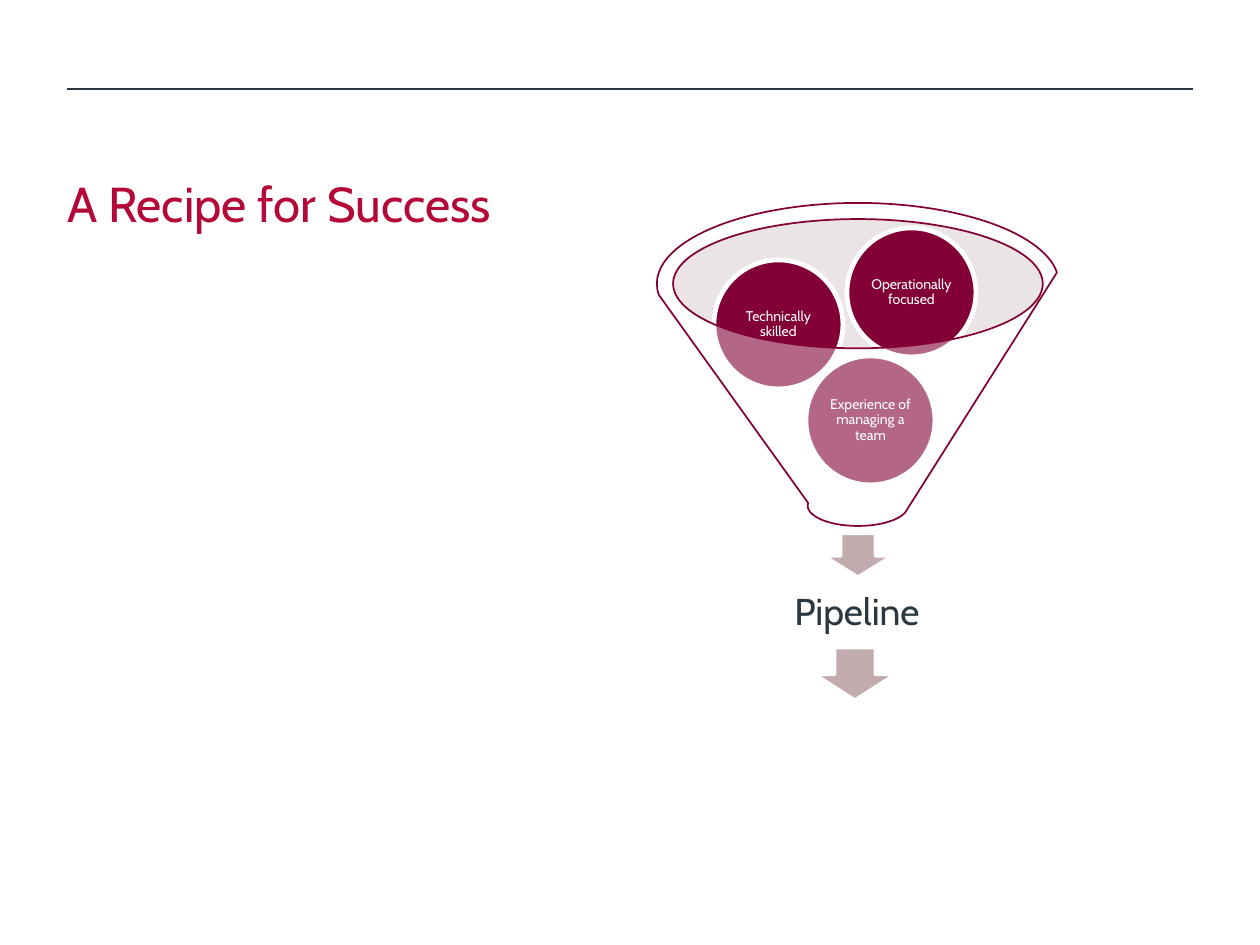
from lxml import etree
from pptx import Presentation
from pptx.dml.color import RGBColor
from pptx.enum.shapes import MSO_CONNECTOR, MSO_SHAPE
from pptx.enum.text import MSO_ANCHOR, PP_ALIGN
from pptx.oxml.ns import qn
from pptx.util import Emu, Pt

OVAL, FUNNEL, DOWN_ARROW = MSO_SHAPE.OVAL, MSO_SHAPE.FUNNEL, MSO_SHAPE.DOWN_ARROW
STRAIGHT = MSO_CONNECTOR.STRAIGHT
MIDDLE, BOTTOM = MSO_ANCHOR.MIDDLE, MSO_ANCHOR.BOTTOM
LEFT, CENTER = PP_ALIGN.LEFT, PP_ALIGN.CENTER

# Content: positions and sizes in px
SLIDE = (1260, 945)
RULE = (67, 89, 1193, 89)
TITLE = ("A Recipe for Success", (67, 72, 1025, 160))
OUTCOME = ("Pipeline", (685, 570, 344, 86))
MOUTH = (672, 218, 371, 129)
FUNNEL_BOX = (657, 203, 402, 323)
BALL_SIZE = 129
BALLS = [
    ("Experience of managing a team", 806, 356),
    ("Technically skilled", 714, 260),
    ("Operationally focused", 847, 228),
]
UPPER_ARROW = (822, 533, 72, 45)
LOWER_ARROW = (813, 647, 84, 54)

THEME = {
    "font": "Cabin",
    "title": "B30838", "dark": "2C3841", "wine": "820036",
    "arrow": "C1ABAE", "mouth": "CDBDBF", "white": "FFFFFF",
    "title_size": 21, "outcome_size": 16, "ball_size": 6,
    "rule_width": 0.5, "funnel_width": 0.75, "edge_width": 2,
    "veil": 40,
}


def px(value):
    return Emu(round(value * 914400 / 168))


def color(name):
    return RGBColor.from_string(THEME[name])


def add_part(page, kind, area, fill, line=None, width=None, opacity=None):
    part = page.shapes.add_shape(kind, *map(px, area))
    part.shadow.inherit = False
    part.fill.solid()
    part.fill.fore_color.rgb = color(fill)
    if opacity:
        tint = part.fill._xPr.find(qn("a:solidFill"))[0]
        etree.SubElement(tint, qn("a:alpha"), val=str(opacity * 1000))
    if line:
        part.line.color.rgb = color(line)
        part.line.width = Pt(THEME[width])
    else:
        part.line.fill.background()
    return part


def write(box, text, size, ink, align=CENTER, anchor=MIDDLE, inset=0, spacing=0.9):
    frame = box.text_frame
    frame.word_wrap = True
    frame.vertical_anchor = anchor
    frame.margin_left = frame.margin_right = px(inset)
    frame.margin_top = frame.margin_bottom = px(inset)
    para = frame.paragraphs[0]
    para.text = text
    para.alignment = align
    para.line_spacing = spacing
    para.font.name = THEME["font"]
    para.font.size = Pt(THEME[size])
    para.font.color.rgb = color(ink)


def add_text(page, content, *style, **layout):
    text, area = content
    write(page.shapes.add_textbox(*map(px, area)), text, *style, **layout)


def add_arrow(page, area):
    add_part(page, DOWN_ARROW, area, "arrow", "white", "edge_width")


def main():
    deck = Presentation()
    deck.slide_width, deck.slide_height = map(px, SLIDE)
    page = deck.slides.add_slide(deck.slide_layouts[6])

    # Heading
    rule = page.shapes.add_connector(STRAIGHT, *map(px, RULE))
    rule.line.color.rgb = color("dark")
    rule.line.width = Pt(THEME["rule_width"])
    etree.SubElement(rule._element.spPr, qn("a:effectLst"))
    add_text(page, TITLE, "title_size", "title", align=LEFT, anchor=BOTTOM, spacing=0.85)

    # Funnel mouth, first arrow and outcome
    add_part(page, OVAL, MOUTH, "mouth", opacity=THEME["veil"])
    add_arrow(page, UPPER_ARROW)
    add_text(page, OUTCOME, "outcome_size", "dark", inset=20)

    # Ingredients, seen through the translucent funnel
    for text, left, top in BALLS:
        ball = add_part(page, OVAL, (left, top, BALL_SIZE, BALL_SIZE),
                        "wine", "white", "edge_width")
        write(ball, text, "ball_size", "white", inset=2)
    add_part(page, FUNNEL, FUNNEL_BOX, "white", "wine", "funnel_width", THEME["veil"])

    # Arrow leaving the outcome
    add_arrow(page, LOWER_ARROW)

    deck.save("out.pptx")


if __name__ == "__main__":
    main()
